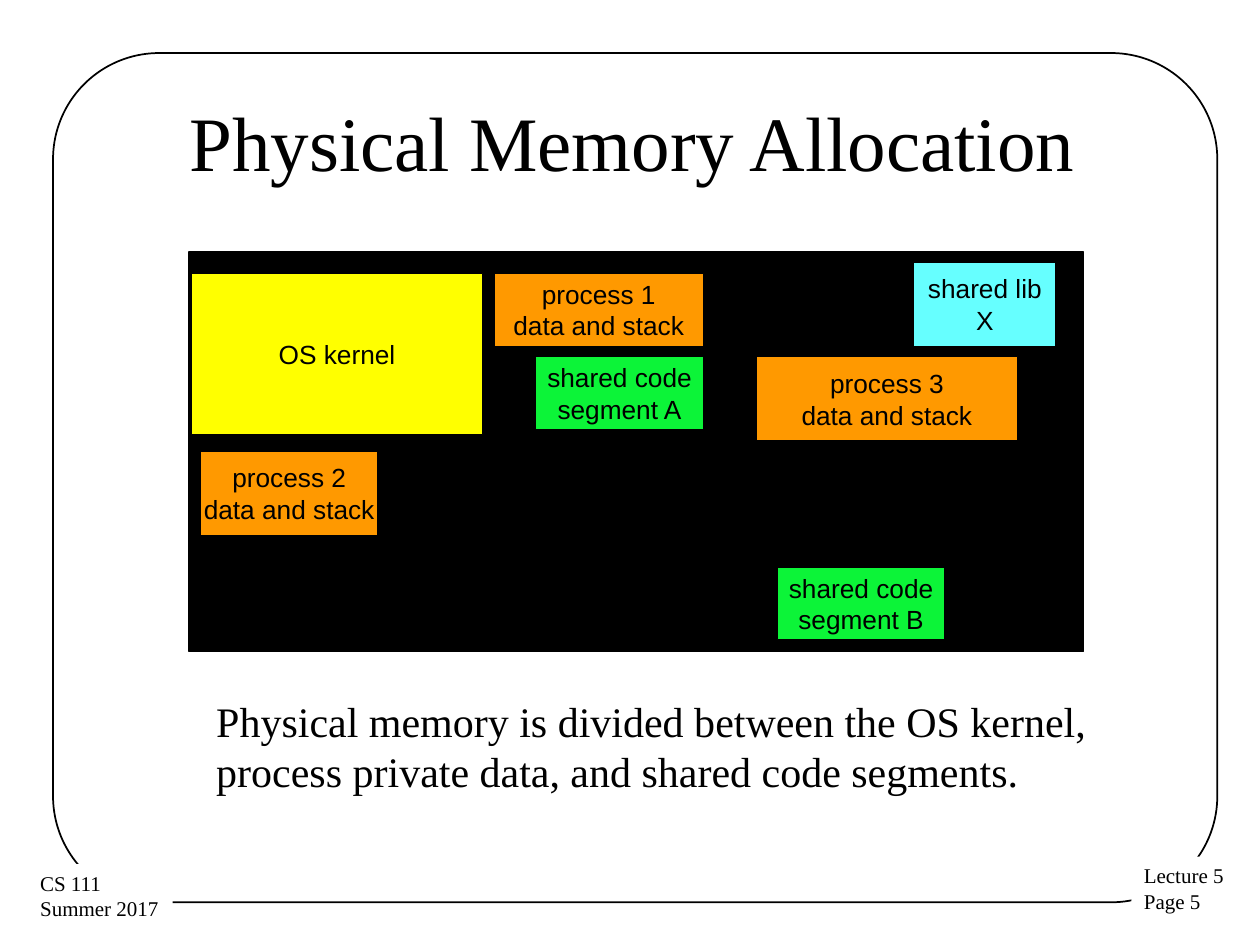
import pptx
import pptx.util
import pptx.dml.color
import pptx.enum.shapes
import pptx.enum.text

Cm = pptx.util.Cm
Pt = pptx.util.Pt
SHAPE = pptx.enum.shapes.MSO_SHAPE
ANCHOR = pptx.enum.text.MSO_ANCHOR
ALIGN = pptx.enum.text.PP_ALIGN

COLOURS = {
    "ink": "000000",
    "paper": "FFFFFF",
    "kernel": "FFFF00",
    "process": "FF9900",
    "code": "0CF438",
    "library": "66FFFF",
}

FRAME = (1.07, 1.07, 23.47, 17.12)
MEMORY = (3.81, 5.08, 18.03, 8.05)

FOOTERS = [
    (["Lecture 5", "Page 5"], (22.81, 17.27, 2.13, 1.3)),
    (["CS 111", "Summer 2017"], (0.56, 17.42, 2.92, 1.3)),
]
TITLE = (["Physical Memory Allocation"], (0.33, 1.24, 24.84, 3.18))
CAPTION = (
    [
        "Physical memory is divided between the OS kernel,",
        "process private data, and shared code segments.",
    ],
    (4.09, 13.89, 18.26, 2.31),
)
SEGMENTS = [
    (["OS kernel"], "kernel", (3.86, 5.51, 5.87, 3.25)),
    (["process 1", "data and stack"], "process", (9.96, 5.51, 4.22, 1.47)),
    (["shared code", "segment A"], "code", (10.8, 7.19, 3.38, 1.47)),
    (["shared lib", "X"], "library", (18.42, 5.28, 2.87, 1.7)),
    (["process 2", "data and stack"], "process", (4.04, 9.09, 3.58, 1.7)),
    (["process 3", "data and stack"], "process", (15.24, 7.19, 5.28, 1.7)),
    (["shared code", "segment B"], "code", (15.67, 11.43, 3.38, 1.47)),
]

STYLES = {
    "title": {
        "frame": {"word_wrap": True, "vertical_anchor": ANCHOR.MIDDLE},
        "para": {"alignment": ALIGN.CENTER},
        "font": {"name": "Times New Roman", "size": Pt(44)},
    },
    "caption": {
        "frame": {"word_wrap": False, "margin_left": Cm(0.27), "margin_right": Cm(0.27)},
        "para": {"alignment": ALIGN.LEFT},
        "font": {"name": "Times New Roman", "size": Pt(24)},
    },
    "footer": {
        "frame": {"word_wrap": False},
        "para": {"alignment": ALIGN.LEFT},
        "font": {"name": "Times New Roman", "size": Pt(12)},
    },
    "segment": {
        "frame": {
            "word_wrap": False,
            "vertical_anchor": ANCHOR.MIDDLE,
            "margin_left": Cm(0.23),
            "margin_right": Cm(0.23),
        },
        "para": {"alignment": ALIGN.CENTER},
        "font": {"name": "Arial", "size": Pt(15)},
    },
}


def colour(name):
    return pptx.dml.color.RGBColor.from_string(COLOURS[name])


def apply(target, values):
    for name, value in values.items():
        setattr(target, name, value)


def paint(box, name):
    box.fill.solid()
    box.fill.fore_color.rgb = colour(name)


def add_box(page, kind, place, line_width, fill=None):
    box = page.shapes.add_shape(kind, *map(Cm, place))
    box.shadow.inherit = False
    box.line.color.rgb = colour("ink")
    box.line.width = Pt(line_width)
    if fill:
        paint(box, fill)
    else:
        box.fill.background()
    return box


def write(box, lines, style):
    frame = box.text_frame
    apply(frame, style["frame"])
    for index, line in enumerate(lines):
        para = frame.add_paragraph() if index else frame.paragraphs[0]
        apply(para, style["para"])
        span = para.add_run()
        span.text = line
        apply(span.font, style["font"])
        span.font.color.rgb = colour("ink")


def add_text(page, lines, place, style):
    box = page.shapes.add_textbox(*map(Cm, place))
    write(box, lines, STYLES[style])
    return box


def main():
    deck = pptx.Presentation()
    deck.slide_width, deck.slide_height = Cm(25.4), Cm(19.05)
    page = deck.slides.add_slide(deck.slide_layouts[6])

    border = add_box(page, SHAPE.ROUNDED_RECTANGLE, FRAME, 1)
    border.adjustments[0] = 0.125
    for lines, place in FOOTERS:
        paint(add_text(page, lines, place, "footer"), "paper")

    add_text(page, *TITLE, "title")
    add_box(page, SHAPE.RECTANGLE, MEMORY, 0.75, "ink")
    for lines, fill, place in SEGMENTS:
        box = add_box(page, SHAPE.RECTANGLE, place, 0.75, fill)
        write(box, lines, STYLES["segment"])
    add_text(page, *CAPTION, "caption")

    deck.save("out.pptx")


if __name__ == "__main__":
    main()
